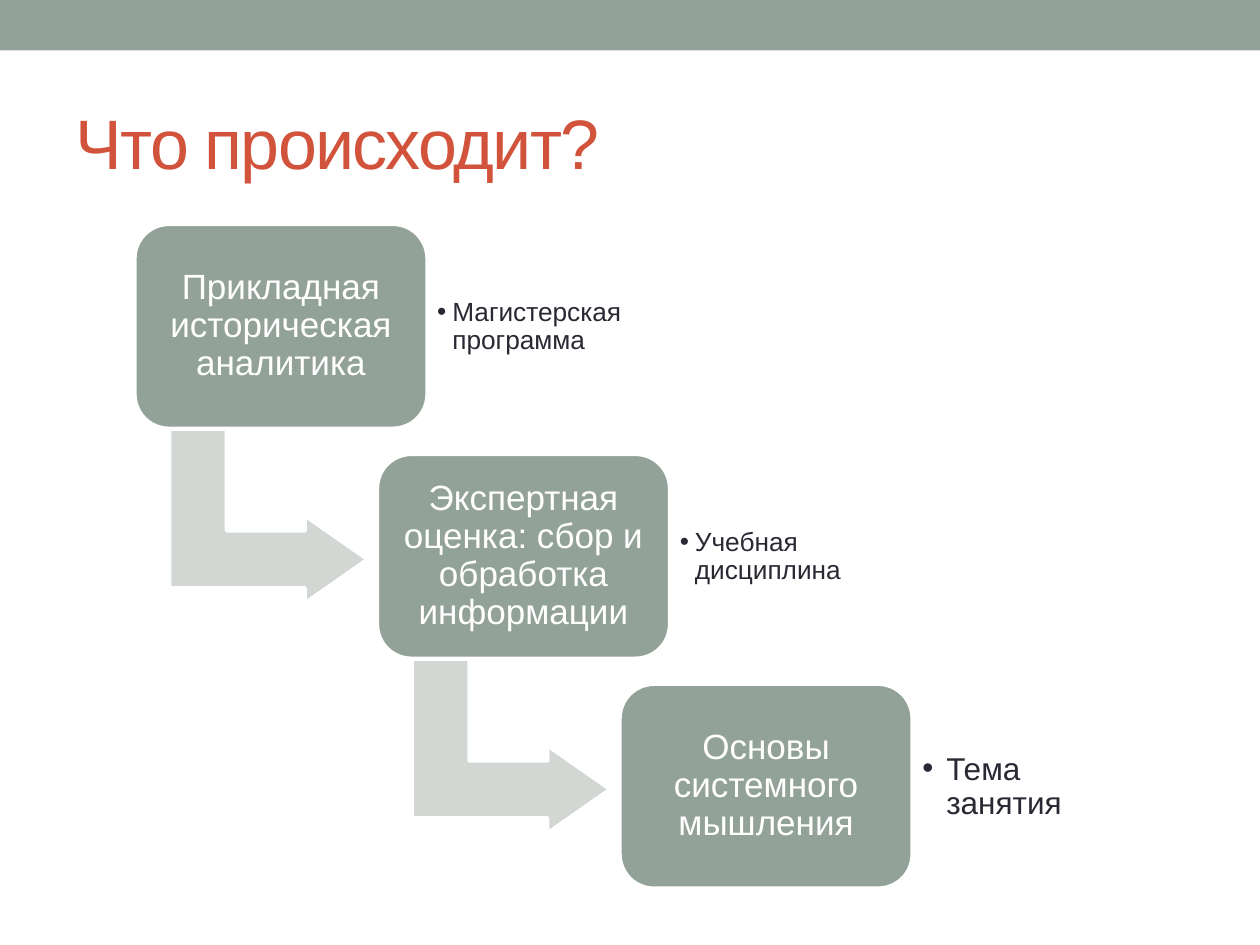
from lxml.etree import SubElement
from pptx import Presentation
from pptx.dml.color import RGBColor
from pptx.enum.shapes import MSO_SHAPE as Shape
from pptx.enum.text import MSO_ANCHOR as Anchor, PP_ALIGN as Align
from pptx.oxml.ns import qn
from pptx.util import Inches, Pt

SAGE = RGBColor(0x93, 0xA2, 0x99)
PALE = RGBColor(0xD2, 0xD7, 0xD4)
RUST = RGBColor(0xD2, 0x53, 0x3C)
INK = RGBColor(0x29, 0x29, 0x34)
WHITE = RGBColor(0xFF, 0xFF, 0xFF)

STEPS = [
    ("Прикладная историческая аналитика", "Магистерская программа", 15, 0.12),
    ("Экспертная оценка: сбор и обработка информации", "Учебная дисциплина", 15, 0.12),
    ("Основы системного мышления", "Тема занятия", 18, 0.19),
]
STEP_WIDTH, STEP_HEIGHT = 2.32, 1.62


def write(shape, text, size, color, align=Align.LEFT, inset=0.08, spacing=0.9, after=0, indent=0, tracking=0):
    """Fill a shape with one formatted paragraph, bulleted when it has an indent."""
    frame = shape.text_frame
    frame.word_wrap = True
    frame.vertical_anchor = Anchor.MIDDLE
    frame.margin_left = frame.margin_right = Inches(inset)
    frame.margin_top = frame.margin_bottom = Inches(inset)
    para = frame.paragraphs[0]
    para.alignment, para.line_spacing, para.space_after = align, spacing, Pt(after)
    span = para.add_run()
    span.text = text
    span.font.name, span.font.size, span.font.color.rgb = "Arial", Pt(size), color
    if tracking:
        span.font._element.set("spc", str(tracking * 100))
    if indent:
        props = para._p.get_or_add_pPr()
        props.set("marL", str(Inches(indent)))
        props.set("indent", str(-Inches(indent)))
        SubElement(props, qn("a:buFont"), typeface="Arial")
        SubElement(props, qn("a:buChar"), char="•")


def add_block(page, kind, box, fill, adjustments=(), outlined=True):
    """Add a flat preset shape in the given box."""
    block = page.shapes.add_shape(kind, *map(Inches, box))
    block.shadow.inherit = False
    block.fill.solid()
    block.fill.fore_color.rgb = fill
    if outlined:
        block.line.color.rgb = WHITE
        block.line.width = Pt(2.08)
    else:
        block.line.fill.background()
    for index, value in enumerate(adjustments):
        block.adjustments[index] = value
    return block


def add_header(page, box):
    """Place the top band and the title below it."""
    left, top, width, height = box
    band = add_block(page, Shape.RECTANGLE, (left, top, width, 0.4), SAGE, outlined=False)
    page.shapes._spTree.insert(2, band._element)
    title = page.shapes.title
    title.left, title.top = Inches(left + 0.5), Inches(top + 0.58)
    title.width, title.height = Inches(width - 1), Inches(height - 0.58)
    write(title, "Что происходит?", 40, RUST, inset=0.1, spacing=1, tracking=-1)


def add_step(page, box, heading, note, note_size, indent, has_next):
    """Place one step with its note and the arrow to the next step."""
    left, top, width, height = box
    if has_next:
        arrow_box = (left + 0.37, top + 1.53, 1.38, 1.57)
        arrow = add_block(page, Shape.BENT_UP_ARROW, arrow_box, PALE, (0.328, 0.25, 0.358))
        arrow.rotation = 90
    block = add_block(page, Shape.ROUNDED_RECTANGLE, box, SAGE, (0.167,))
    write(block, heading, 20, WHITE, align=Align.CENTER, after=7)
    note_box = (left + width, top + 0.16, 1.69, 1.31)
    write(page.shapes.add_textbox(*map(Inches, note_box)), note, note_size, INK, after=2, indent=indent)


def add_staircase(page, box):
    """Spread the steps evenly from the top left to the bottom right of the box."""
    left, top, width, height = box
    last = len(STEPS) - 1
    for index, step in enumerate(STEPS):
        step_left = left + (width - STEP_WIDTH) * index / last
        step_top = top + (height - STEP_HEIGHT) * index / last
        add_step(page, (step_left, step_top, STEP_WIDTH, STEP_HEIGHT), *step, has_next=index < last)


def main():
    """Build the slide and save it."""
    deck = Presentation()
    deck.slide_width, deck.slide_height = Inches(10), Inches(7.5)
    page = deck.slides.add_slide(deck.slide_layouts[5])
    add_header(page, (0, 0, 10, 1.66))
    add_staircase(page, (1.07, 1.78, 6.17, 5.27))
    deck.save("out.pptx")


if __name__ == "__main__":
    main()
